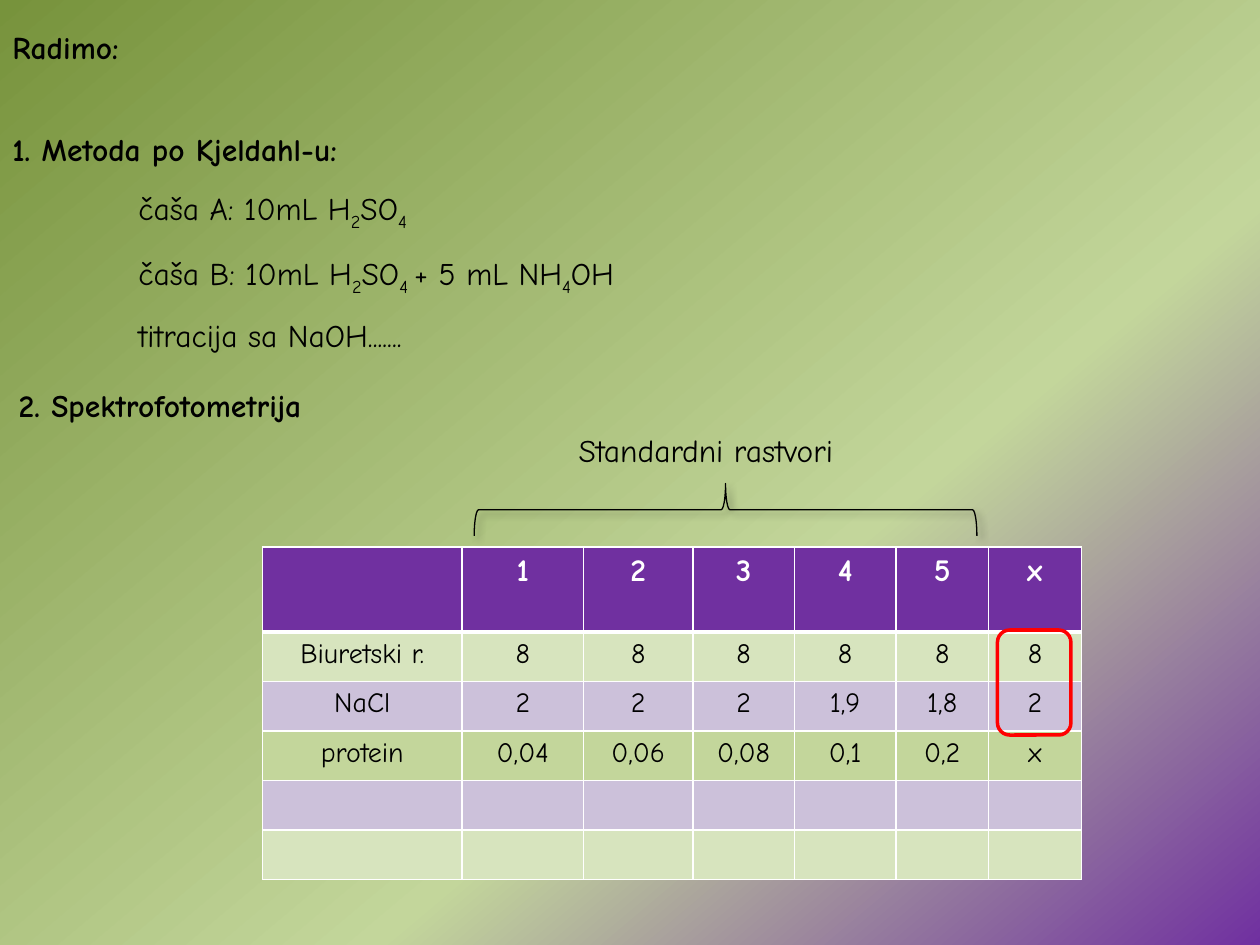
from dataclasses import dataclass

from lxml.etree import SubElement
from pptx import Presentation
from pptx.dml.color import RGBColor
from pptx.enum.shapes import MSO_SHAPE
from pptx.enum.text import PP_ALIGN
from pptx.oxml.ns import qn
from pptx.util import Pt

FONT = "Comic Neue"
BLACK, WHITE, RED, PURPLE = "000000", "FFFFFF", "FF0000", "7030A0"
PALE_GREEN, GREEN, LILAC = "D7E4BE", "C3D69B", "CCC1DA"


@dataclass
class Line:
    text: str
    bold: bool = False
    indent: float = 0


@dataclass
class TextBlock:
    left: float
    top: float
    width: float
    height: float
    lines: list[Line]
    spacing: float = 1.0


@dataclass
class Row:
    fill: str
    values: list[str]
    height: float = 28.3


@dataclass
class Outline:
    kind: MSO_SHAPE
    left: float
    top: float
    width: float
    height: float
    color: str
    weight: float
    rotation: float = 0


BLOCKS = [
    TextBlock(0, 12.5, 83.5, 29, [Line("Radimo:", bold=True)]),
    TextBlock(0, 60, 385, 138, [
        Line("1. Metoda po Kjeldahl-u:", bold=True),
        Line("čaša A: 10mL H|2|SO|4", indent=72),
        Line("čaša B: 10mL H|2|SO|4 |+ 5 mL NH|4|OH", indent=72),
        Line("titracija sa NaOH.......", indent=72),
    ], 1.5),
    TextBlock(3.6, 206, 232.5, 36.5, [Line("2. Spektrofotometrija", bold=True)], 1.5),
    TextBlock(323.5, 242.5, 181.5, 29, [Line("Standardni rastvori")]),
]
COLUMNS = [114, 69.5, 62.5, 58, 58, 53, 53]
ROWS = [
    Row(PURPLE, ["", "1", "2", "3", "4", "5", "x"], 48.6),
    Row(PALE_GREEN, ["Biuretski r."] + ["8"] * 6),
    Row(LILAC, ["NaCl", "2", "2", "2", "1,9", "1,8", "2"]),
    Row(GREEN, ["protein", "0,04", "0,06", "0,08", "0,1", "0,2", "x"]),
    Row(LILAC, [""] * 7),
    Row(PALE_GREEN, [""] * 7),
]
SAMPLE_FRAME = Outline(MSO_SHAPE.ROUNDED_RECTANGLE, 570, 360, 42, 60, RED, 2)
STANDARDS_BRACE = Outline(MSO_SHAPE.RIGHT_BRACE, 399.6, 147.6, 30, 287.3, BLACK, 0.75, 270)


def rgb(value: str) -> RGBColor:
    return RGBColor.from_string(value)


def format_run(r, size: float, color: str, bold: bool) -> None:
    r.font.name = FONT
    r.font.size = Pt(size)
    r.font.bold = bold
    r.font.color.rgb = rgb(color)


def add_color(parent, value: str):
    return SubElement(parent, qn("a:srgbClr"), val=value)


def draw_background(s, stops: list[tuple[int, str]], angle: float) -> None:
    fill = s.background.fill
    fill.gradient()
    fill.gradient_angle = angle
    stop_list = next(s.element.iter(qn("a:gsLst")))
    stop_list.clear()
    for position, color in stops:
        add_color(SubElement(stop_list, qn("a:gs"), pos=str(position * 1000)), color)


def draw_text(s, block: TextBlock) -> None:
    box = s.shapes.add_textbox(Pt(block.left), Pt(block.top), Pt(block.width), Pt(block.height))
    tf = box.text_frame
    tf.word_wrap = True
    for i, line in enumerate(block.lines):
        p = tf.add_paragraph() if i else tf.paragraphs[0]
        p.line_spacing = block.spacing
        if line.indent:
            p._p.get_or_add_pPr().set("marL", str(Pt(line.indent)))
        for j, part in enumerate(line.text.split("|")):
            r = p.add_run()
            r.text = part
            format_run(r, 18, BLACK, line.bold)
            if j % 2:
                r.font._element.set("baseline", "-25000")


def set_borders(cell, top: float, bottom: float) -> None:
    properties = cell._tc.get_or_add_tcPr()
    for i, (side, weight) in enumerate([("L", 1), ("R", 1), ("T", top), ("B", bottom)]):
        line = SubElement(properties, qn(f"a:ln{side}"), w=str(Pt(weight)))
        add_color(SubElement(line, qn("a:solidFill")), WHITE)
        properties.insert(i, line)


def draw_table(s, left: float, top: float, columns: list[float], rows: list[Row]) -> None:
    height = sum(row.height for row in rows)
    frame = s.shapes.add_table(len(rows), len(columns), Pt(left), Pt(top),
                               Pt(sum(columns)), Pt(height))
    table = frame.table
    for column, width in zip(table.columns, columns):
        column.width = Pt(width)
    for i, row in enumerate(rows):
        header = i == 0
        table.rows[i].height = Pt(row.height)
        for j, value in enumerate(row.values):
            cell = table.cell(i, j)
            cell.margin_bottom = 0
            cell.fill.solid()
            cell.fill.fore_color.rgb = rgb(row.fill)
            set_borders(cell, 3 if i == 1 else 1, 3 if header else 1)
            if value:
                p = cell.text_frame.paragraphs[0]
                p.text = value
                p.alignment = PP_ALIGN.CENTER
                format_run(p.runs[0], 18 if header else 16, WHITE if header else BLACK, header)


def draw_outline(s, outline: Outline):
    sp = s.shapes.add_shape(outline.kind, Pt(outline.left), Pt(outline.top),
                            Pt(outline.width), Pt(outline.height))
    sp.rotation = outline.rotation
    sp.fill.background()
    sp.line.color.rgb = rgb(outline.color)
    sp.line.width = Pt(outline.weight)
    sp.shadow.inherit = False
    return sp


def add_shadow(sp, color: str, opacity: int, blur: float, distance: float, angle: int) -> None:
    effects = sp._element.spPr.find(qn("a:effectLst"))
    shadow = SubElement(effects, qn("a:outerShdw"), blurRad=str(Pt(blur)),
                        dist=str(Pt(distance)), dir=str(angle * 60000), rotWithShape="0")
    SubElement(add_color(shadow, color), qn("a:alpha"), val=str(opacity * 1000))


def main() -> None:
    prs = Presentation()
    prs.slide_width, prs.slide_height = Pt(720), Pt(540)
    s = prs.slides.add_slide(prs.slide_layouts[6])
    draw_background(s, [(0, PURPLE), (37, GREEN), (100, "77933C")], 130)
    draw_table(s, 150, 312.5, COLUMNS, ROWS)
    draw_outline(s, SAMPLE_FRAME)
    add_shadow(draw_outline(s, STANDARDS_BRACE), BLACK, 40, 4, 3, 45)
    for block in BLOCKS:
        draw_text(s, block)
    prs.save("out.pptx")


if __name__ == "__main__":
    main()
